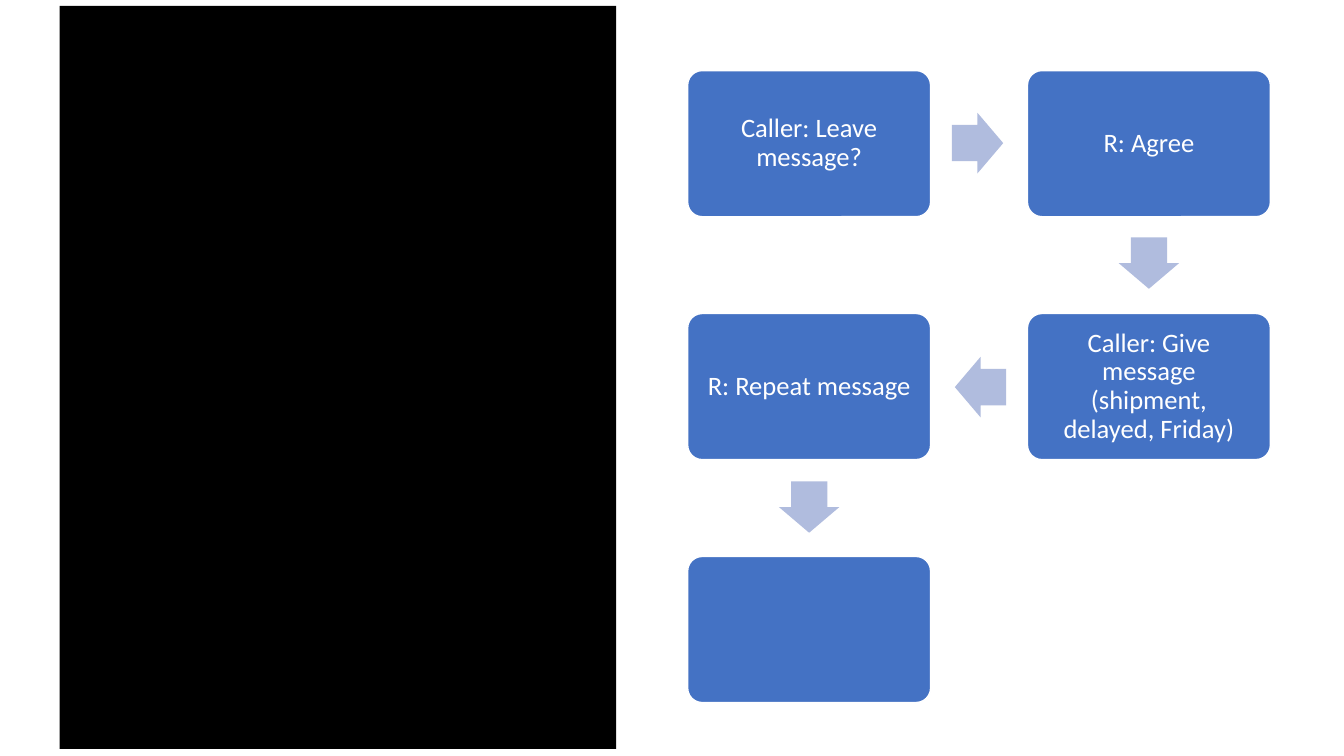
"""Build a slide with a black panel and a winding phone message flow."""
from dataclasses import dataclass

import pptx
import pptx.dml.color
import pptx.enum.shapes
import pptx.enum.text
import pptx.shapes.autoshape
import pptx.slide
import pptx.util

Inches = pptx.util.Inches
RGBColor = pptx.dml.color.RGBColor
Kind = pptx.enum.shapes.MSO_SHAPE

WHITE = RGBColor(0xFF, 0xFF, 0xFF)
BLACK = RGBColor(0x00, 0x00, 0x00)
BLUE = RGBColor(0x44, 0x72, 0xC4)
PALE = RGBColor(0xB0, 0xBC, 0xDE)

LEFT, TOP = 6.82, 0.7
STEP_X, STEP_Y = 3.37, 2.41
BOX_W, BOX_H = 2.41, 1.45
HEAD_W, HEAD_H = 0.51, 0.6


@dataclass
class Step:
    col: int
    row: int
    text: str = ""


@dataclass
class Arrow:
    left: float
    top: float
    turn: int = 0


STEPS = [
    Step(0, 0, "Caller: Leave message?"),
    Step(1, 0, "R: Agree"),
    Step(1, 1, "Caller: Give message (shipment, delayed, Friday)"),
    Step(0, 1, "R: Repeat message"),
    Step(0, 2),
]
ARROWS = [
    Arrow(9.44, 1.12),
    Arrow(11.14, 2.31, 90),
    Arrow(9.47, 3.54, 180),
    Arrow(7.77, 4.73, 90),
]


def add_block(slide: pptx.slide.Slide, kind: Kind, left: float, top: float,
              width: float, height: float,
              fill: RGBColor) -> pptx.shapes.autoshape.Shape:
    """Add a flat shape with a plain fill and no line."""
    block = slide.shapes.add_shape(
        kind, Inches(left), Inches(top), Inches(width), Inches(height))
    block.shadow.inherit = False
    block.fill.solid()
    block.fill.fore_color.rgb = fill
    block.line.fill.background()
    return block


def add_step(slide: pptx.slide.Slide, step: Step) -> None:
    """Add one rounded box of the flow with its text."""
    box = add_block(slide, Kind.ROUNDED_RECTANGLE, LEFT + step.col * STEP_X,
                    TOP + step.row * STEP_Y, BOX_W, BOX_H, BLUE)
    box.adjustments[0] = 0.1
    box.line.color.rgb = WHITE
    box.line.width = pptx.util.Pt(1)
    if not step.text:
        return
    frame = box.text_frame
    frame.word_wrap = True
    frame.vertical_anchor = pptx.enum.text.MSO_ANCHOR.MIDDLE
    frame.margin_left = frame.margin_right = Inches(0.12)
    frame.margin_top = frame.margin_bottom = Inches(0.12)
    para = frame.paragraphs[0]
    para.alignment = pptx.enum.text.PP_ALIGN.CENTER
    para.line_spacing = 0.9
    run = para.add_run()
    run.text = step.text
    run.font.name = "Calibri"
    run.font.size = pptx.util.Pt(19)
    run.font.color.rgb = WHITE


def add_arrow(slide: pptx.slide.Slide, arrow: Arrow) -> None:
    """Add one block arrow turned along the flow."""
    head = add_block(slide, Kind.RIGHT_ARROW, arrow.left, arrow.top,
                     HEAD_W, HEAD_H, PALE)
    head.adjustments[0] = 0.6
    head.adjustments[1] = 0.5
    head.rotation = arrow.turn


def main() -> None:
    """Build and save the slide."""
    deck = pptx.Presentation()
    deck.slide_width = Inches(13.33)
    deck.slide_height = Inches(7.5)
    slide = deck.slides.add_slide(deck.slide_layouts[6])
    for step in STEPS:
        add_step(slide, step)
    for arrow in ARROWS:
        add_arrow(slide, arrow)
    add_block(slide, Kind.RECTANGLE, 0.59, 0.06, 5.52, 7.37, BLACK)
    deck.save("out.pptx")


if __name__ == "__main__":
    main()
